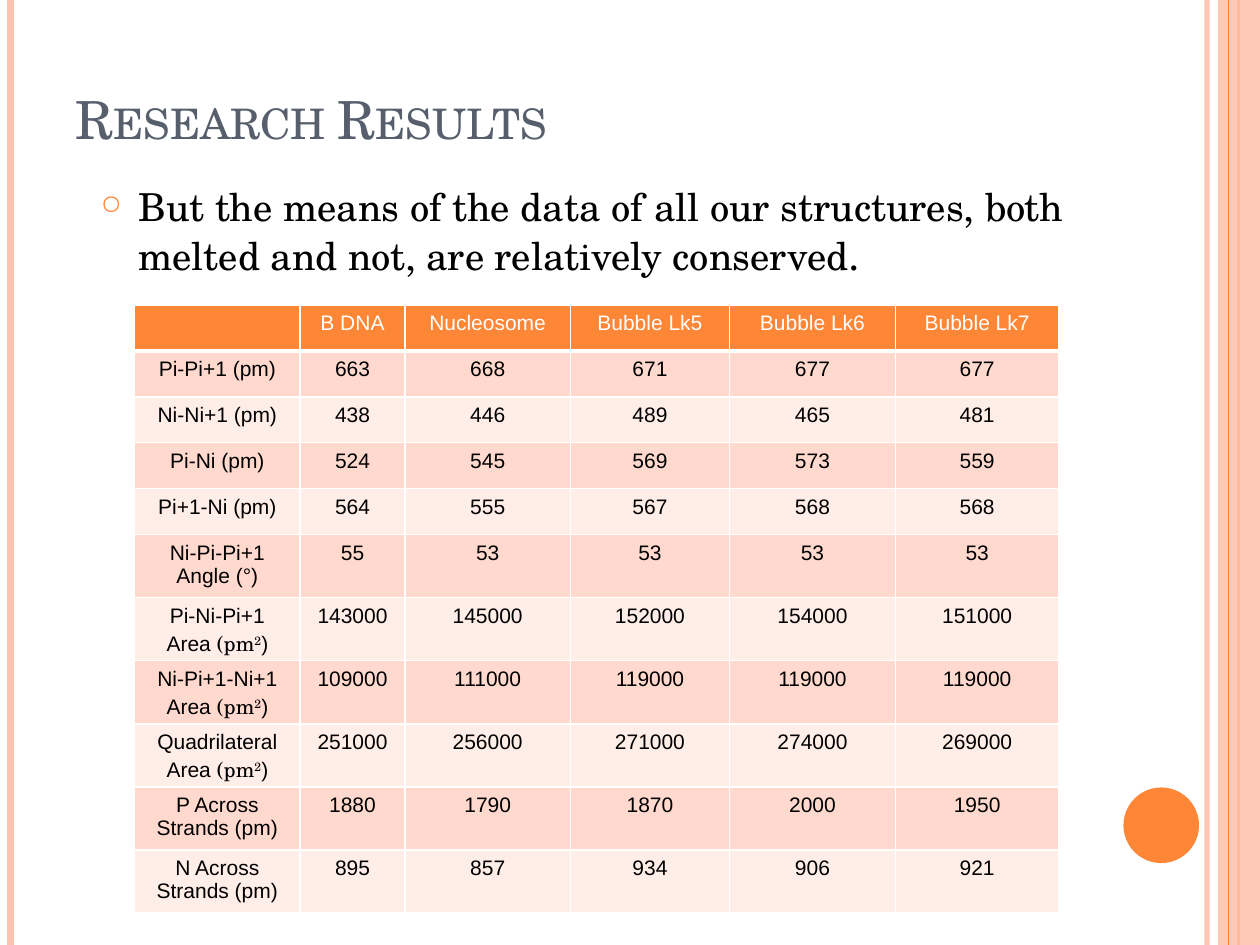
from dataclasses import dataclass
from typing import Any

import lxml.etree
import pptx
import pptx.dml.color
import pptx.enum.shapes
import pptx.enum.text
import pptx.oxml.ns
import pptx.util

Pt = pptx.util.Pt
RGBColor = pptx.dml.color.RGBColor
qn = pptx.oxml.ns.qn

ORANGE = RGBColor(0xFE, 0x86, 0x37)
PEACH = RGBColor(0xFE, 0xC3, 0xAE)
BAND_DARK = RGBColor(0xFF, 0xD9, 0xCE)
BAND_LIGHT = RGBColor(0xFF, 0xED, 0xE8)
SLATE = RGBColor(0x57, 0x5F, 0x6D)
BLACK = RGBColor(0, 0, 0)
WHITE = RGBColor(0xFF, 0xFF, 0xFF)
SERIF = "TeX Gyre Schola"
SANS = "Arial"
SLIDE_WIDTH, SLIDE_HEIGHT = 720, 540
ROW_HEIGHT = 26.25
COLUMN_WIDTHS = (94.5, 60, 94.5, 91, 94.75, 93.5)
HEADINGS = ("", "B DNA", "Nucleosome", "Bubble Lk5", "Bubble Lk6", "Bubble Lk7")


@dataclass(frozen=True)
class Stripe:
    x: float
    width: float
    color: RGBColor
    opacity: int = 100


@dataclass(frozen=True)
class Measure:
    label: str
    values: tuple[int, ...]
    is_area: bool = False


@dataclass(frozen=True)
class Piece:
    text: str
    font: dict[str, Any]
    attributes: dict[str, str]


STRIPES = (
    Stripe(689.75, 3, PEACH, 93),
    Stripe(6, 4.5, PEACH),
    Stripe(707.75, 1.5, ORANGE),
)
INNER_STRIPE = Stripe(702, 0.75, ORANGE)

MEASURES = (
    Measure("Pi-Pi+1 (pm)", (663, 668, 671, 677, 677)),
    Measure("Ni-Ni+1 (pm)", (438, 446, 489, 465, 481)),
    Measure("Pi-Ni (pm)", (524, 545, 569, 573, 559)),
    Measure("Pi+1-Ni (pm)", (564, 555, 567, 568, 568)),
    Measure("Ni-Pi-Pi+1 Angle (°)", (55, 53, 53, 53, 53)),
    Measure("Pi-Ni-Pi+1 Area ", (143000, 145000, 152000, 154000, 151000), True),
    Measure("Ni-Pi+1-Ni+1 Area ", (109000, 111000, 119000, 119000, 119000), True),
    Measure("Quadrilateral Area ", (251000, 256000, 271000, 274000, 269000), True),
    Measure("P Across Strands (pm)", (1880, 1790, 1870, 2000, 1950)),
    Measure("N Across Strands (pm)", (895, 857, 934, 906, 921)),
)


def piece(text: str, size: float, name: str, color: RGBColor, **attributes: str) -> Piece:
    return Piece(text, {"size": Pt(size), "name": name, "rgb": color}, attributes)


def write(paragraph, pieces: list[Piece]) -> None:
    for item in pieces:
        run = paragraph.add_run()
        run.text = item.text
        for key, value in item.font.items():
            setattr(run.font.color if key == "rgb" else run.font, key, value)
        for key, value in item.attributes.items():
            run._r.get_or_add_rPr().set(key, value)


def set_opacity(properties, percent: int) -> None:
    if percent < 100:
        color = next(properties.iter(qn("a:srgbClr")))
        lxml.etree.SubElement(color, qn("a:alpha"), val=str(percent * 1000))


def draw_stripe(slide, stripe: Stripe) -> None:
    connector = slide.shapes.add_connector(
        pptx.enum.shapes.MSO_CONNECTOR.STRAIGHT,
        Pt(stripe.x), Pt(0), Pt(stripe.x), Pt(SLIDE_HEIGHT),
    )
    connector.line.color.rgb = stripe.color
    connector.line.width = Pt(stripe.width)
    properties = connector._element.spPr
    set_opacity(properties, stripe.opacity)
    lxml.etree.SubElement(properties, qn("a:effectLst"))


def draw_shape(slide, kind, box: tuple[float, ...], color: RGBColor, opacity: int = 100) -> None:
    shape = slide.shapes.add_shape(kind, *map(Pt, box))
    shape.shadow.inherit = False
    shape.fill.solid()
    shape.fill.fore_color.rgb = color
    shape.line.fill.background()
    set_opacity(shape._element.spPr, opacity)


def draw_text(slide, box: tuple[float, ...], anchor, pieces: list[Piece]):
    frame = slide.shapes.add_textbox(*map(Pt, box)).text_frame
    for key, value in {"word_wrap": True, "vertical_anchor": anchor}.items():
        setattr(frame, key, value)
    paragraph = frame.paragraphs[0]
    write(paragraph, pieces)
    return paragraph


def add_bullet(paragraph) -> None:
    paragraph.space_before = Pt(6)
    properties = paragraph._p.get_or_add_pPr()
    properties.set("marL", str(Pt(21.6)))
    properties.set("indent", str(-Pt(21.6)))
    color = lxml.etree.SubElement(properties, qn("a:buClr"))
    lxml.etree.SubElement(color, qn("a:srgbClr"), val=str(ORANGE))
    lxml.etree.SubElement(properties, qn("a:buSzPct"), val="70000")
    lxml.etree.SubElement(properties, qn("a:buChar"), char="○")


def format_cell(cell, fill: RGBColor, pieces: list[Piece], bottom_border: float = 1) -> None:
    properties = cell._tc.get_or_add_tcPr()
    for side, width in {"L": 1, "R": 1, "T": 1, "B": bottom_border}.items():
        border = lxml.etree.SubElement(properties, qn(f"a:ln{side}"), w=str(Pt(width)))
        solid = lxml.etree.SubElement(border, qn("a:solidFill"))
        lxml.etree.SubElement(solid, qn("a:srgbClr"), val=str(WHITE))
    cell.fill.solid()
    cell.fill.fore_color.rgb = fill
    paragraph = cell.text_frame.paragraphs[0]
    paragraph.alignment = pptx.enum.text.PP_ALIGN.CENTER
    write(paragraph, pieces)
    if not pieces:
        paragraph._p.get_or_add_endParaRPr().set("sz", "1200")


def label_pieces(measure: Measure) -> list[Piece]:
    pieces = [piece(measure.label, 12, SANS, BLACK)]
    if measure.is_area:
        pieces += [
            piece("(pm", 12, SERIF, BLACK),
            piece("2", 12, SERIF, BLACK, baseline="30000"),
            piece(")", 12, SANS, BLACK),
        ]
    return pieces


def draw_table(slide) -> None:
    row_count = len(MEASURES) + 1
    table = slide.shapes.add_table(
        row_count, len(HEADINGS), Pt(77), Pt(174.25),
        Pt(sum(COLUMN_WIDTHS)), Pt(ROW_HEIGHT * row_count),
    ).table
    for flag, value in {"first_row": False, "horz_banding": False}.items():
        setattr(table, flag, value)
    for column, width in zip(table.columns, COLUMN_WIDTHS):
        column.width = Pt(width)
    for row in table.rows:
        row.height = Pt(ROW_HEIGHT)
    for column, heading in enumerate(HEADINGS):
        pieces = [piece(heading, 12, SANS, WHITE)] if heading else []
        format_cell(table.cell(0, column), ORANGE, pieces, bottom_border=3)
    for row, measure in enumerate(MEASURES, start=1):
        fill = BAND_DARK if row % 2 else BAND_LIGHT
        format_cell(table.cell(row, 0), fill, label_pieces(measure))
        for column, value in enumerate(measure.values, start=1):
            format_cell(table.cell(row, column), fill, [piece(str(value), 12, SANS, BLACK)])


def main() -> None:
    presentation = pptx.Presentation()
    presentation.slide_width, presentation.slide_height = Pt(SLIDE_WIDTH), Pt(SLIDE_HEIGHT)
    slide = presentation.slides.add_slide(presentation.slide_layouts[6])
    shapes = pptx.enum.shapes.MSO_SHAPE
    anchors = pptx.enum.text.MSO_ANCHOR
    for stripe in STRIPES:
        draw_stripe(slide, stripe)
    draw_shape(slide, shapes.RECTANGLE, (696, 0, 24, SLIDE_HEIGHT), PEACH, 87)
    draw_stripe(slide, INNER_STRIPE)
    draw_shape(slide, shapes.OVAL, (642, 450, 43.2, 43.2), ORANGE)
    draw_text(slide, (36, 13, 588, 76.25), anchors.BOTTOM,
              [piece("Research Results", 30, SERIF, SLATE, cap="small")])
    draw_table(slide)
    statement = ("But the means of the data of all our structures, both melted and not, "
                 "are relatively conserved")
    add_bullet(draw_text(slide, (50.4, 100.8, 589, 62), anchors.TOP,
                         [piece(statement, 22, SERIF, BLACK), piece(".", 24, SERIF, BLACK)]))
    presentation.save("out.pptx")


if __name__ == "__main__":
    main()
